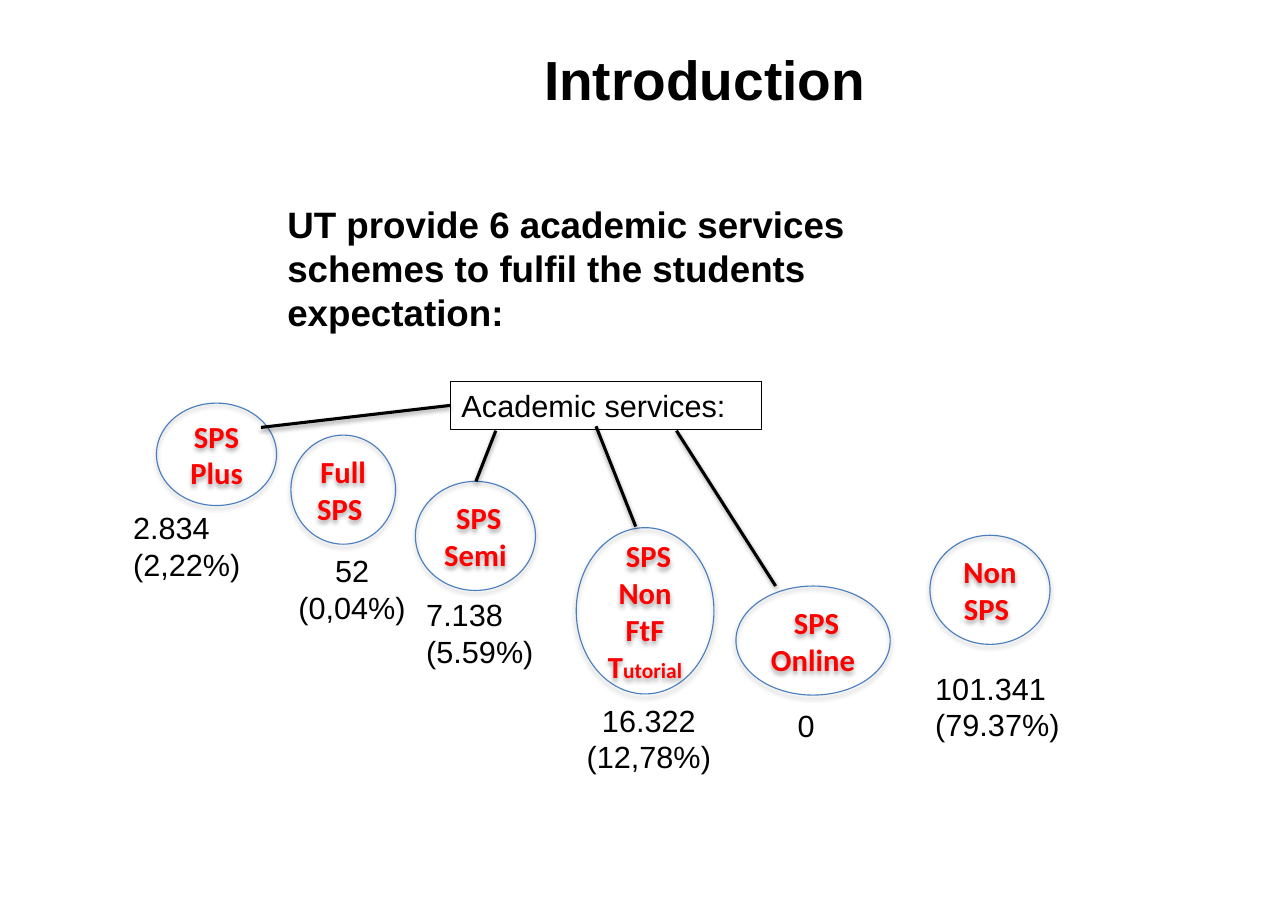
from lxml.etree import SubElement
from pptx import Presentation
from pptx.dml.color import RGBColor
from pptx.enum.shapes import MSO_CONNECTOR, MSO_SHAPE
from pptx.enum.text import MSO_ANCHOR, MSO_AUTO_SIZE, PP_ALIGN
from pptx.oxml.ns import qn
from pptx.util import Pt

EMU_PER_PX = 9144
BLACK = RGBColor(0x00, 0x00, 0x00)
RED = RGBColor(0xFF, 0x00, 0x00)
BLUE = RGBColor(0x4B, 0x7E, 0xBC)


def px(*lengths):
    return [length * EMU_PER_PX for length in lengths]


class SlideBuilder:
    text_font = "Arial"
    scheme_font = "Calibri"
    body_size = 20

    def __init__(self, slide):
        self.slide = slide

    def style(self, paragraph, font, color, size=body_size, bold=False):
        paragraph.font.name = font
        paragraph.font.size = Pt(size)
        paragraph.font.bold = bold
        paragraph.font.color.rgb = color

    def shadow(self, shape, distance, opacity):
        properties = shape._element.spPr
        effects = properties.find(qn("a:effectLst"))
        if effects is None:
            effects = SubElement(properties, qn("a:effectLst"))
        outer = SubElement(effects, qn("a:outerShdw"), blurRad="40000",
                           dist=str(distance), dir="5400000", rotWithShape="0")
        color = SubElement(outer, qn("a:srgbClr"), val="000000")
        SubElement(color, qn("a:alpha"), val=str(opacity))

    def text(self, bounds, lines, size=body_size, bold=False, wrap=True,
             align=PP_ALIGN.LEFT):
        box = self.slide.shapes.add_textbox(*px(*bounds))
        frame = box.text_frame
        frame.word_wrap = wrap
        frame.auto_size = MSO_AUTO_SIZE.SHAPE_TO_FIT_TEXT
        frame.text = "\n".join(lines)
        for paragraph in frame.paragraphs:
            paragraph.alignment = align
            self.style(paragraph, self.text_font, BLACK, size, bold)
        return box

    def framed_text(self, bounds, lines):
        box = self.text(bounds, lines)
        box.line.color.rgb = BLACK
        box.line.width = Pt(0.75)

    def ellipse(self, bounds, text):
        shape = self.slide.shapes.add_shape(MSO_SHAPE.OVAL, *px(*bounds))
        shape.fill.background()
        shape.line.color.rgb = BLUE
        shape.line.width = Pt(0.75)
        shape.shadow.inherit = False
        self.shadow(shape, 23000, 35000)
        frame = shape.text_frame
        frame.word_wrap = True
        frame.vertical_anchor = MSO_ANCHOR.MIDDLE
        frame.text = text
        for paragraph in frame.paragraphs:
            paragraph.alignment = PP_ALIGN.CENTER
            self.style(paragraph, self.scheme_font, RED, bold=True)
        return shape

    def line(self, start, end):
        connector = self.slide.shapes.add_connector(
            MSO_CONNECTOR.STRAIGHT, *px(*start, *end))
        connector.line.color.rgb = BLACK
        connector.line.width = Pt(2)
        self.shadow(connector, 20000, 38000)


SCHEMES = [
    ((142, 366, 109, 93), "SPS Plus"),
    ((264, 395, 95, 99), "Full SPS "),
    ((377, 437, 109, 99), " SPS Semi "),
    ((668, 532, 140, 99), " SPS Online "),
    ((844, 486, 109, 99), "Non\vSPS "),
]
COUNTS = [
    ((111, 457, 124, 77), ["2.834", "(2,22%)"], PP_ALIGN.LEFT),
    ((259, 496, 121, 77), ["52", "(0,04%)"], PP_ALIGN.CENTER),
    ((377, 536, 121, 77), ["7.138", "(5.59%)"], PP_ALIGN.LEFT),
    ((516, 632, 146, 77), ["16.322", "(12,78%)"], PP_ALIGN.CENTER),
    ((839, 603, 133, 77), ["101.341", "(79.37%)"], PP_ALIGN.LEFT),
    ((714, 637, 52, 44), ["0"], PP_ALIGN.LEFT),
]
LINKS = [
    ((450, 391), (432, 437)),
    ((409, 368), (237, 388)),
    ((541, 387), (577, 478)),
    ((614, 391), (704, 532)),
]


def main():
    presentation = Presentation()
    presentation.slide_width, presentation.slide_height = px(1169, 827)
    slide = presentation.slides.add_slide(presentation.slide_layouts[6])
    builder = SlideBuilder(slide)

    builder.text((484, 36, 315, 71), ["Introduction"], 36, True, wrap=False)
    builder.text((251, 178, 547, 131),
                 ["UT provide 6 academic services schemes to fulfil "
                  "the students expectation:"], 24, True)

    for bounds, name in SCHEMES:
        builder.ellipse(bounds, name)
    tutorial = builder.ellipse((523, 479, 125, 151), " SPS Non\nFtF T")
    ending = tutorial.text_frame.paragraphs[1].add_run()
    ending.text = "utorial"
    ending.font.size = Pt(14)

    for bounds, lines, align in COUNTS:
        builder.text(bounds, lines, align=align)
    for start, end in LINKS:
        builder.line(start, end)
    builder.framed_text((409, 346, 282, 44), ["Academic services:"])

    presentation.save("out.pptx")


if __name__ == "__main__":
    main()
